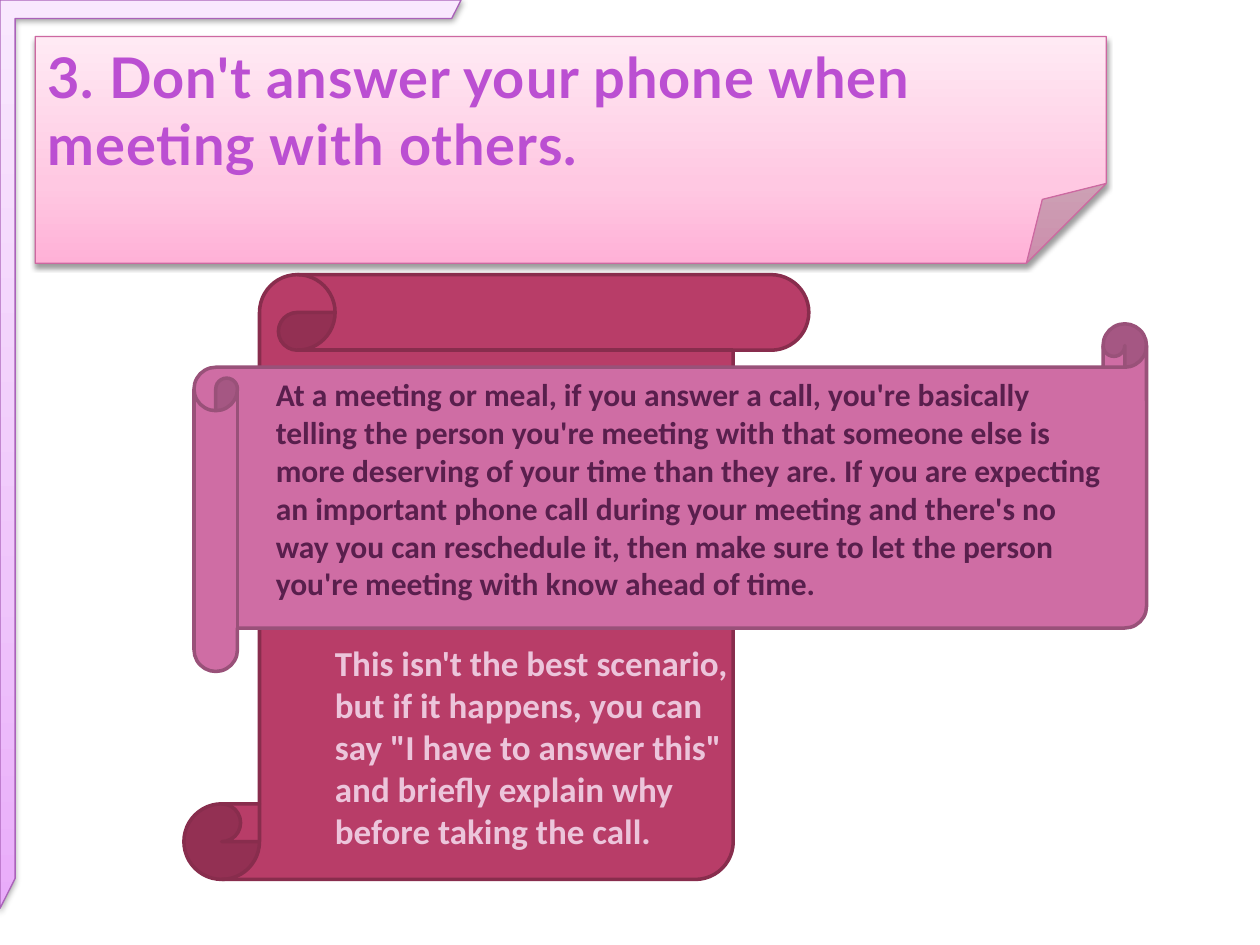
from copy import deepcopy

from lxml import etree
from pptx import Presentation
from pptx.dml.color import RGBColor
from pptx.enum.shapes import MSO_SHAPE
from pptx.enum.text import MSO_ANCHOR, PP_ALIGN
from pptx.oxml.ns import qn
from pptx.util import Inches, Pt

FRAME = MSO_SHAPE.HALF_FRAME
FOLD = MSO_SHAPE.FOLDED_CORNER
TALL = MSO_SHAPE.VERTICAL_SCROLL
WIDE = MSO_SHAPE.HORIZONTAL_SCROLL
LEFT = PP_ALIGN.LEFT
TOP = MSO_ANCHOR.TOP


class Theme:
    stops = (0, 0.35, 1)
    pink = ("FFB1D7", "FFC8E2", "FFEAF4")
    lilac = ("E9ACFA", "EFC5FB", "F9E8FE")
    pink_line, lilac_line = "CD68A1", "AA62B9"
    rose, rose_line = "B83D68", "882D4D"
    mauve, mauve_line = "CF6DA4", "995179"
    title, plum, pale = "BB4FD2", "591F4D", "ECC5DB"
    head, body = "Lato", "Calibri"
    title_size, tip_size, note_size = 32, 20, 18
    thin, thick = 0.75, 2


def rgb(code):
    return RGBColor.from_string(code)


def place(box):
    return [Inches(n) for n in box]


def adjust(shape, guides):
    """Set the named guides, which the library does not list for every shape."""
    geom = shape.element.spPr.find(qn("a:prstGeom"))
    held = geom.find(qn("a:avLst"))
    if held is None:
        held = etree.SubElement(geom, qn("a:avLst"))
    for old in list(held):
        held.remove(old)
    for name, value in guides.items():
        etree.SubElement(held, qn("a:gd"), name=name,
                         fmla=f"val {round(value * 100000)}")


def add_shape(slide, kind, box, line, width):
    shape = slide.shapes.add_shape(kind, *place(box))
    shape.line.color.rgb = rgb(line)
    shape.line.width = Pt(width)
    shape.shadow.inherit = False
    return shape


def add_panel(slide, kind, box, fill, line, guides):
    """Shape with an upward three-stop gradient and a soft shadow below."""
    shape = add_shape(slide, kind, box, line, Theme.thin)
    adjust(shape, guides)
    shape.fill.gradient()
    shape.fill.gradient_angle = 90
    stops = shape.element.spPr.find(".//" + qn("a:gsLst"))
    stops.append(deepcopy(stops[0]))
    for stop, spot, code in zip(shape.fill.gradient_stops, Theme.stops, fill):
        stop.position = spot
        stop.color.rgb = rgb(code)
    effects = shape.element.spPr.find(qn("a:effectLst"))
    shade = etree.SubElement(effects, qn("a:outerShdw"), blurRad=str(Pt(3.1)),
                             dist=str(Pt(1.6)), dir="5400000", rotWithShape="0")
    tint = etree.SubElement(shade, qn("a:srgbClr"), val="000000")
    etree.SubElement(tint, qn("a:alpha"), val="38000")
    return shape


def add_scroll(slide, kind, box, fill, line):
    shape = add_shape(slide, kind, box, line, Theme.thick)
    shape.fill.solid()
    shape.fill.fore_color.rgb = rgb(fill)


def write(shape, text, size, color, font=Theme.body, space=0):
    frame = shape.text_frame
    frame.word_wrap = True
    frame.vertical_anchor = TOP
    para = frame.paragraphs[0]
    para.alignment = LEFT
    run = para.add_run()
    run.text = text
    run.font.name = font
    run.font.size = Pt(size)
    run.font.bold = True
    run.font.color.rgb = rgb(color)
    if space:
        run._r.get_or_add_rPr().set("spc", str(round(space * 100)))


def add_title(slide, box):
    card = add_panel(slide, FOLD, box, Theme.pink, Theme.pink_line,
                     {"adj": 0.352})
    write(card, "3. Don't answer your phone when meeting with others.",
          Theme.title_size, Theme.title, font=Theme.head, space=0.5)


def add_note(slide, box):
    x, y, w, h = box
    add_scroll(slide, WIDE, box, Theme.mauve, Theme.mauve_line)
    label = slide.shapes.add_textbox(
        *place((x + 0.55, y + 0.36, w - 0.71, h - 0.84)))
    write(label, "At a meeting or meal, if you answer a call, you're basically "
          "telling the person you're meeting with that someone else is more "
          "deserving of your time than they are. If you are expecting an "
          "important phone call during your meeting and there's no way you "
          "can reschedule it, then make sure to let the person you're meeting "
          "with know ahead of time.", Theme.note_size, Theme.plum)


def add_tip(slide, box):
    label = slide.shapes.add_textbox(*place(box))
    write(label, "This isn't the best scenario, but if it happens, you can "
          "say \"I have to answer this\" and briefly explain why before "
          "taking the call.", Theme.tip_size, Theme.pale)


def main():
    deck = Presentation()
    deck.slide_width, deck.slide_height = Inches(10), Inches(7.5)
    slide = deck.slides.add_slide(deck.slide_layouts[6])
    add_scroll(slide, TALL, (1.46, 2.18, 4.96, 4.8),
               Theme.rose, Theme.rose_line)
    add_title(slide, (0.28, 0.29, 8.5, 1.8))
    add_note(slide, (1.54, 2.57, 7.56, 2.76))
    add_tip(slide, (2.56, 5.04, 3.54, 1.78))
    add_panel(slide, FRAME, (0, 0, 3.66, 7.21), Theme.lilac,
              Theme.lilac_line, {"adj1": 0.04, "adj2": 0.033})
    deck.save("out.pptx")


if __name__ == "__main__":
    main()
